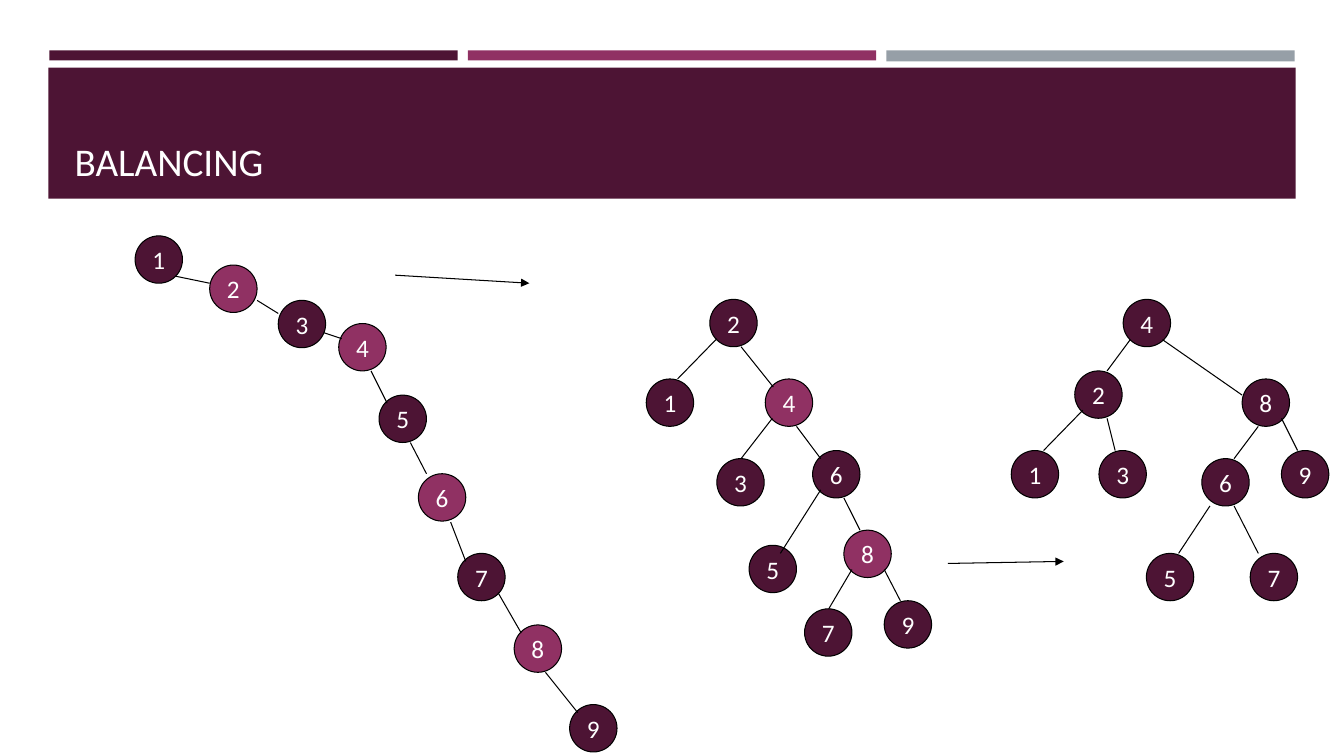
"""Build a slide that shows a degenerate search tree being balanced in two steps."""
from lxml import etree
from pptx import Presentation
from pptx import util as u
from pptx.dml.color import RGBColor
from pptx.enum import shapes, text
from pptx.oxml.ns import qn

COLORS = {"plum": "4D1434", "magenta": "903163", "gray": "969FA7",
          "black": "000000", "white": "FFFFFF"}
TITLE = "BALANCING"
BARS = [
    ((0.49, 0.5, 4.05, 0.1), "plum"),
    ((4.64, 0.5, 4.05, 0.1), "magenta"),
    ((8.79, 0.5, 4.05, 0.11), "gray"),
    ((0.48, 0.67, 12.37, 1.3), "plum"),
]
NODE_SIZE = 0.47
TREES = [
    {
        "nodes": {1: (1.34, 2.34), 2: (2.08, 2.63), 3: (2.76, 2.98),
                  4: (3.36, 3.21), 5: (3.76, 3.92), 6: (4.15, 4.7),
                  7: (4.54, 5.49), 8: (5.1, 6.2), 9: (5.65, 6.99)},
        "highlighted": {2, 4, 6, 8},
        "edges": [(1.74, 2.74, 2.08, 2.81), (2.55, 2.98, 2.76, 3.11),
                  (3.21, 3.3, 3.39, 3.36), (3.68, 3.68, 3.84, 4),
                  (4.07, 4.39, 4.23, 4.7), (4.47, 5.18, 4.62, 5.57),
                  (4.94, 5.88, 5.17, 6.28), (5.41, 6.67, 5.73, 7.07)],
    },
    {
        "nodes": {1: (6.41, 3.76), 2: (7.04, 2.97), 3: (7.11, 4.55),
                  4: (7.59, 3.76), 5: (7.43, 5.41), 6: (8.06, 4.47),
                  7: (7.98, 6.04), 8: (8.37, 5.26), 9: (8.77, 5.96)},
        "highlighted": {4, 8},
        "edges": [(7.11, 3.36, 6.72, 3.76), (7.35, 3.44, 7.67, 3.84),
                  (7.66, 4.15, 7.35, 4.55), (7.9, 4.23, 8.14, 4.55),
                  (8.14, 4.86, 7.74, 5.49), (8.37, 4.94, 8.53, 5.26),
                  (8.45, 5.65, 8.22, 6.04), (8.77, 5.65, 8.93, 5.96)],
    },
    {
        "nodes": {1: (10.03, 4.47), 2: (10.66, 3.68), 3: (10.9, 4.47),
                  4: (11.14, 2.97), 5: (11.37, 5.49), 6: (11.92, 4.55),
                  7: (12.4, 5.49), 8: (12.32, 3.76), 9: (12.71, 4.47)},
        "highlighted": set(),
        "edges": [(11.21, 3.37, 10.98, 3.68), (11.53, 3.37, 12.32, 3.92),
                  (10.74, 4.07, 10.35, 4.47), (10.98, 4.15, 11.06, 4.47),
                  (12.48, 4.23, 12.24, 4.55), (12.71, 4.15, 12.87, 4.47),
                  (12, 5.02, 11.69, 5.49), (12.24, 5.02, 12.48, 5.49)],
    },
]
STEP_ARROWS = [(3.92, 2.73, 5.25, 2.81), (9.4, 5.59, 10.55, 5.57)]
TITLE_FRAME = {"vertical_anchor": text.MSO_ANCHOR.BOTTOM, "word_wrap": True}
NODE_FRAME = {"vertical_anchor": text.MSO_ANCHOR.MIDDLE, "word_wrap": False,
              "margin_left": 0, "margin_right": 0,
              "margin_top": 0, "margin_bottom": 0}


def rgb(name):
    return RGBColor.from_string(COLORS[name])


def inches(values):
    return [u.Inches(value) for value in values]


def write(shape, words, size, alignment, frame_format):
    frame = shape.text_frame
    for name, value in frame_format.items():
        setattr(frame, name, value)
    paragraph = frame.paragraphs[0]
    paragraph.alignment = alignment
    run = paragraph.add_run()
    run.text = words
    for name, value in {"size": u.Pt(size), "name": "Calibri", "bold": False}.items():
        setattr(run.font, name, value)
    run.font.color.rgb = rgb("white")


def add_filled(slide, kind, box, color):
    shape = slide.shapes.add_shape(kind, *inches(box))
    shape.shadow.inherit = False
    shape.fill.solid()
    shape.fill.fore_color.rgb = rgb(color)
    shape.line.fill.background()
    return shape


def add_node(slide, label, position, color):
    node = add_filled(slide, shapes.MSO_SHAPE.OVAL,
                      (*position, NODE_SIZE, NODE_SIZE), color)
    style_line(node.line)
    write(node, str(label), 18, text.PP_ALIGN.CENTER, NODE_FRAME)


def style_line(line):
    line.color.rgb = rgb("black")
    line.width = u.Pt(0.75)


def add_line(slide, ends, arrow=False):
    connector = slide.shapes.add_connector(shapes.MSO_CONNECTOR.STRAIGHT, *inches(ends))
    style_line(connector.line)
    properties = connector._element.spPr
    if arrow:
        etree.SubElement(properties.find(qn("a:ln")), qn("a:tailEnd"), type="triangle")
    etree.SubElement(properties, qn("a:effectLst"))


def main():
    presentation = Presentation()
    presentation.slide_width, presentation.slide_height = inches((13.33, 7.5))
    slide = presentation.slides.add_slide(presentation.slide_layouts[5])

    for box, color in BARS:
        add_filled(slide, shapes.MSO_SHAPE.RECTANGLE, box, color)

    title = slide.shapes.title
    title.left, title.top, title.width, title.height = inches((0.64, 0.77, 12.06, 1.11))
    write(title, TITLE, 28, text.PP_ALIGN.LEFT, TITLE_FRAME)
    slide.shapes._spTree.append(title._element)

    for tree in TREES:
        for label, position in tree["nodes"].items():
            color = "magenta" if label in tree["highlighted"] else "plum"
            add_node(slide, label, position, color)
        for ends in tree["edges"]:
            add_line(slide, ends)
    for ends in STEP_ARROWS:
        add_line(slide, ends, arrow=True)

    presentation.save("out.pptx")


if __name__ == "__main__":
    main()
